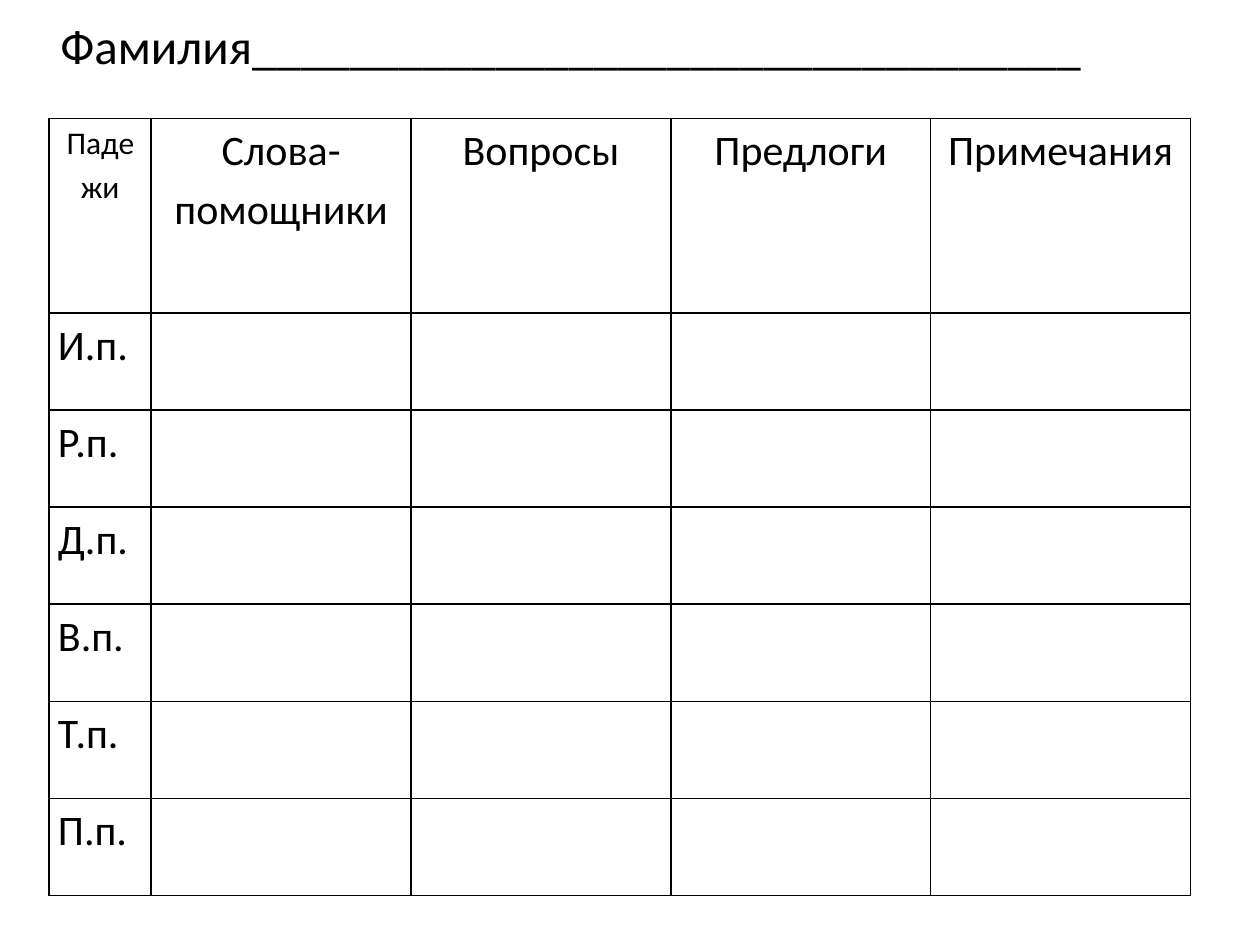
from dataclasses import dataclass

from lxml.etree import SubElement
from pptx import Presentation
from pptx.dml.color import RGBColor
from pptx.enum.text import MSO_ANCHOR, PP_ALIGN
from pptx.oxml.ns import qn
from pptx.util import Inches, Pt


@dataclass(frozen=True)
class Theme:
    font: str = "Calibri"
    ink: str = "000000"
    name_size: int = 28
    table_size: int = 24
    corner_size: int = 18
    border_width: int = 1
    line_spacing: float = 1.15


THEME = Theme()
HEADINGS = ["Падежи", "Слова-помощники", "Вопросы", "Предлоги", "Примечания"]
CASES = ["И.п.", "Р.п.", "Д.п.", "В.п.", "Т.п.", "П.п."]


def style_paragraph(paragraph, size):
    paragraph.font.name = THEME.font
    paragraph.font.size = Pt(size)
    paragraph.font.color.rgb = RGBColor.from_string(THEME.ink)


def add_borders(cell):
    properties = cell._tc.get_or_add_tcPr()
    for position, side in enumerate(("a:lnL", "a:lnR", "a:lnT", "a:lnB")):
        border = SubElement(properties, qn(side), w=str(Pt(THEME.border_width)))
        fill = SubElement(border, qn("a:solidFill"))
        SubElement(fill, qn("a:srgbClr"), val=THEME.ink)
        # Borders must come before the cell fill
        properties.insert(position, border)


def format_cell(cell, text, size, alignment):
    cell.margin_left = cell.margin_right = Inches(0.07)
    cell.margin_top = cell.margin_bottom = 0
    cell.fill.background()
    add_borders(cell)
    cell.text = text
    paragraph = cell.text_frame.paragraphs[0]
    paragraph.alignment = alignment
    paragraph.line_spacing = THEME.line_spacing
    style_paragraph(paragraph, size)


def add_name_line(slide, left, top, width, height):
    name_line = slide.shapes.add_textbox(left, top, width, height)
    frame = name_line.text_frame
    frame.word_wrap = False
    frame.vertical_anchor = MSO_ANCHOR.TOP
    frame.text = "Фамилия" + "_" * 34
    style_paragraph(frame.paragraphs[0], THEME.name_size)


def add_case_table(slide, left, top, width, height):
    case_table = slide.shapes.add_table(
        len(CASES) + 1, len(HEADINGS), left, top, width, height
    ).table
    case_table.first_row = case_table.horz_banding = False

    # Narrow case column, then equal columns
    case_width = Inches(0.81)
    case_table.columns[0].width = case_width
    for column in list(case_table.columns)[1:]:
        column.width = (width - case_width) // (len(HEADINGS) - 1)

    # The heading row is twice as tall as a case row
    case_height = height // (len(CASES) + 2)
    for row in case_table.rows:
        row.height = case_height
    case_table.rows[0].height = 2 * case_height

    blanks = [""] * (len(HEADINGS) - 1)
    rows = [HEADINGS] + [[case] + blanks for case in CASES]
    for r, texts in enumerate(rows):
        alignment = PP_ALIGN.CENTER if r == 0 else PP_ALIGN.LEFT
        for c, text in enumerate(texts):
            size = THEME.corner_size if r == c == 0 else THEME.table_size
            format_cell(case_table.cell(r, c), text, size, alignment)


def main():
    presentation = Presentation()
    presentation.slide_width = Inches(10)
    presentation.slide_height = Inches(7.5)
    slide = presentation.slides.add_slide(presentation.slide_layouts[6])

    add_case_table(slide, Inches(0.39), Inches(0.94), Inches(9.06), Inches(6.17))
    add_name_line(slide, Inches(0.38), Inches(0.07), Inches(8.41), Inches(0.88))

    presentation.save("out.pptx")


if __name__ == "__main__":
    main()
